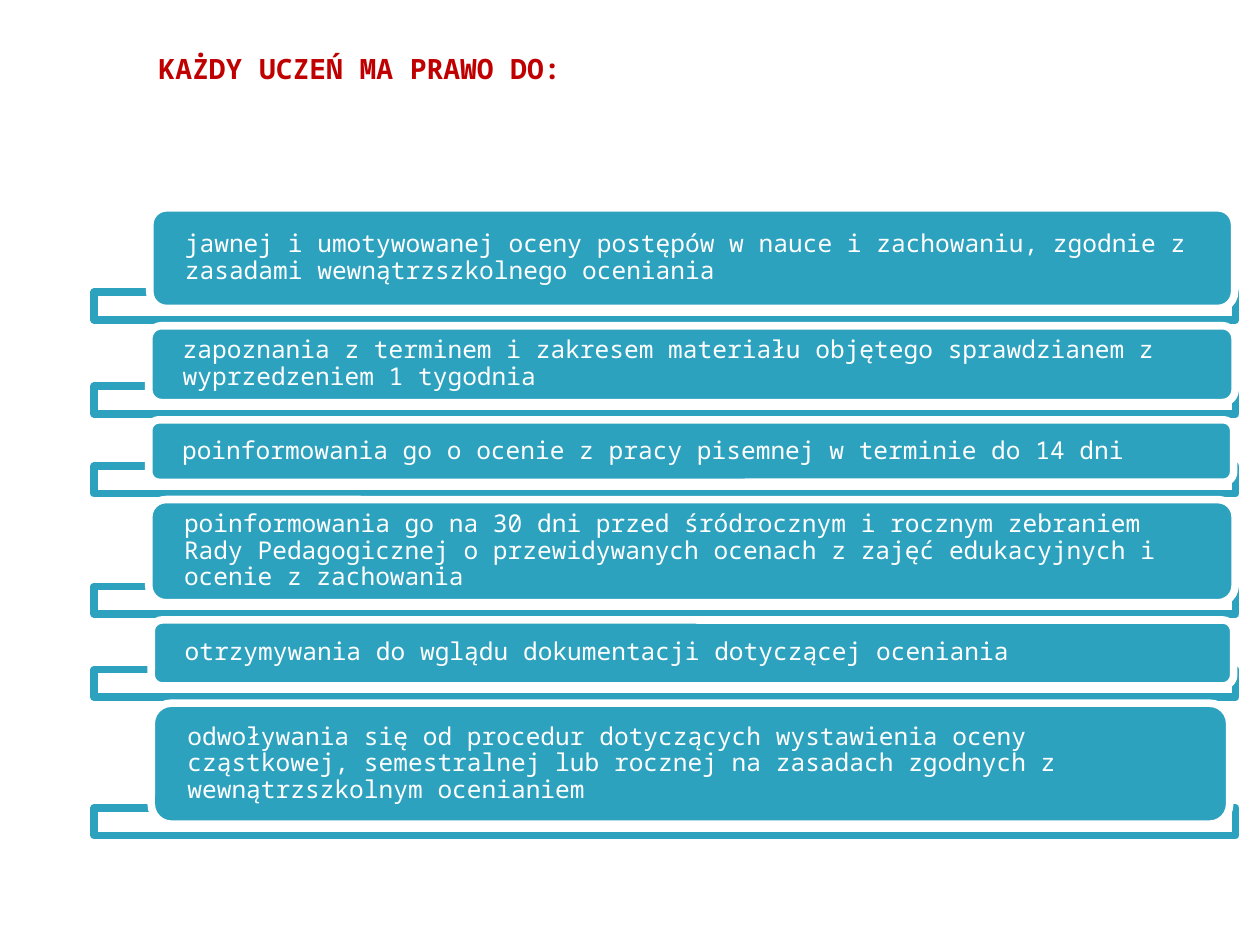
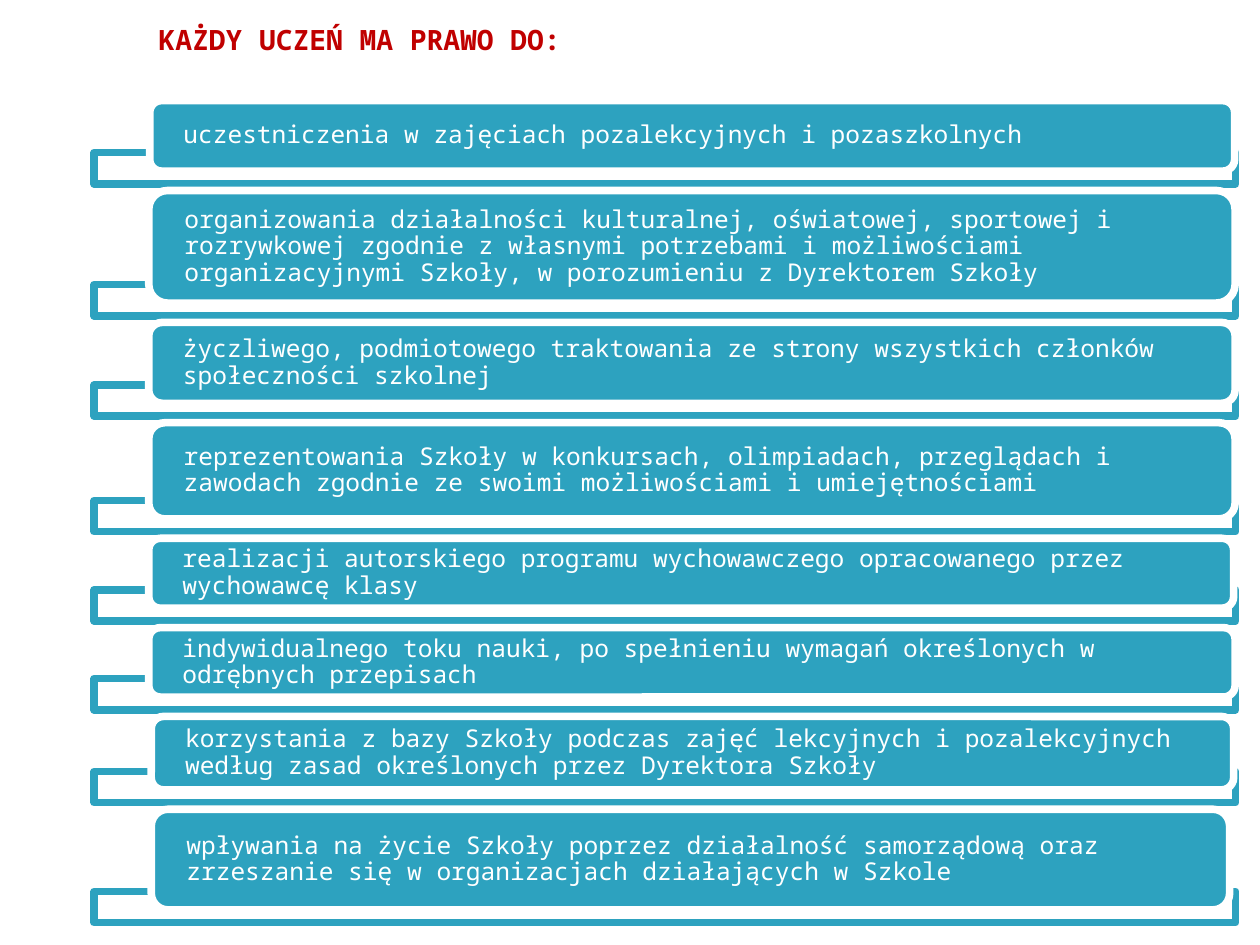
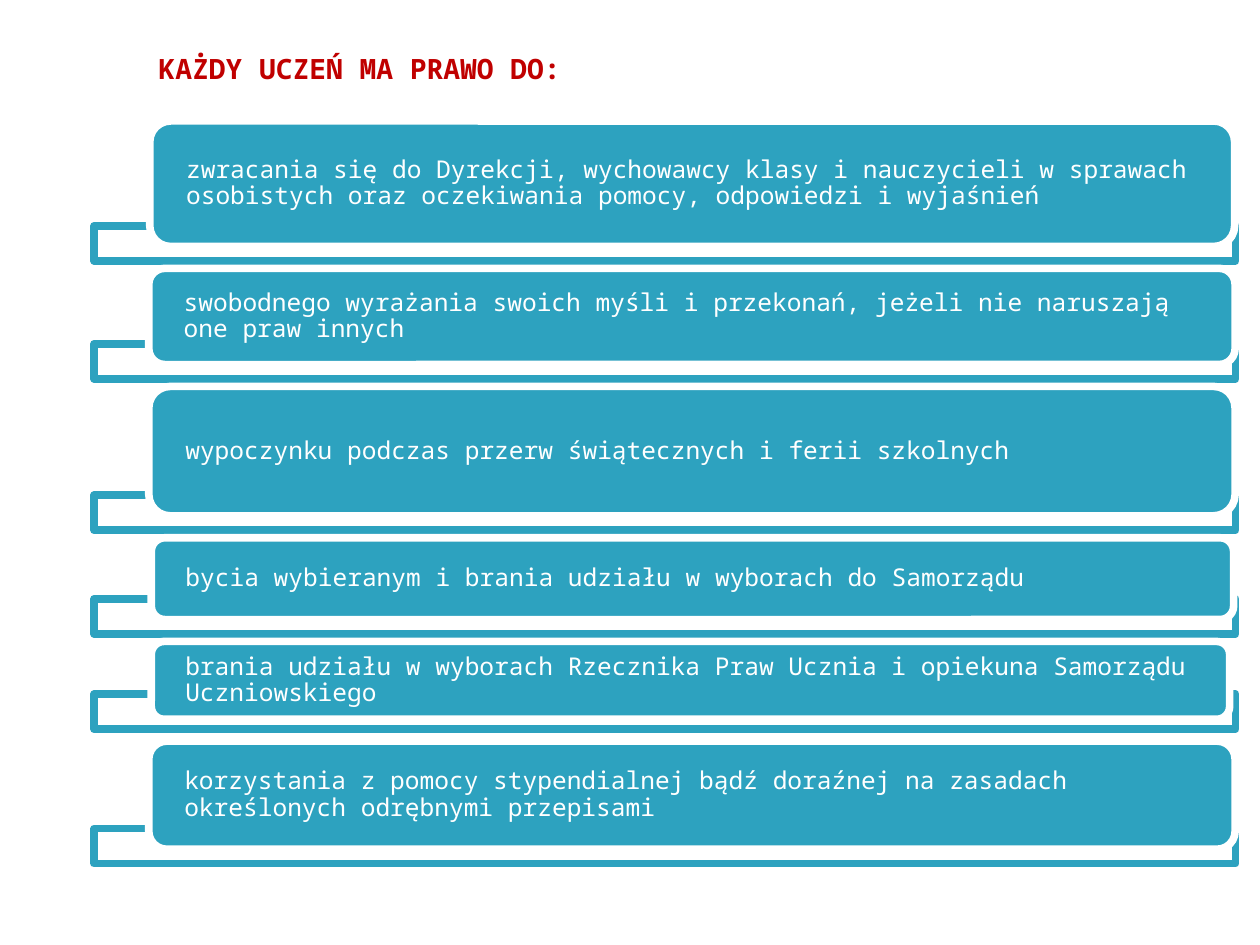
from dataclasses import dataclass
from lxml import etree
from pptx import Presentation
from pptx.dml.color import RGBColor
from pptx.enum.shapes import MSO_SHAPE
from pptx.enum.text import MSO_ANCHOR, MSO_AUTO_SIZE, PP_ALIGN
from pptx.oxml.ns import qn
from pptx.util import Cm, Pt

RECT = MSO_SHAPE.RECTANGLE
ROUND = MSO_SHAPE.ROUNDED_RECTANGLE
TOP, MIDDLE = MSO_ANCHOR.TOP, MSO_ANCHOR.MIDDLE
LEFT, RIGHT = PP_ALIGN.LEFT, PP_ALIGN.RIGHT
NO_FIT = MSO_AUTO_SIZE.NONE

TEAL = RGBColor(0x2D, 0xA2, 0xBF)
RED = RGBColor(0xC0, 0x00, 0x00)
WHITE = RGBColor(0xFF, 0xFF, 0xFF)
FACE = "Noto Sans Mono"
TITLE = "KAŻDY UCZEŃ MA PRAWO DO:"

LIST_X, LIST_W = 1.9, 23.01
TITLE_END = 2.62
OVERLAP, STEP = 0.59, 0.62


@dataclass
class Right:
    left: float
    width: float
    height: float
    text: str
    lift: float = 0


@dataclass
class Page:
    title_y: float
    list_y: float
    strip_h: float
    rights: list


PAGES = [
    Page(0.91, 4.19, 0.56, [
        Right(1.12, 21.87, 2.03, "jawnej i umotywowanej oceny postępów w nauce i zachowaniu, "
              "zgodnie z zasadami wewnątrzszkolnego oceniania"),
        Right(1.1, 21.9, 1.55, "zapoznania z terminem i zakresem materiału objętego "
              "sprawdzianem z wyprzedzeniem 1 tygodnia"),
        Right(1.1, 21.87, 1.26, "poinformowania go o ocenie z pracy pisemnej w terminie do 14 dni"),
        Right(1.1, 21.9, 2.08, "poinformowania go na 30 dni przed śródrocznym i rocznym zebraniem "
              "Rady Pedagogicznej o przewidywanych ocenach z zajęć edukacyjnych "
              "i ocenie z zachowania"),
        Right(1.15, 21.82, 1.33, "otrzymywania do wglądu dokumentacji dotyczącej oceniania"),
        Right(1.15, 21.74, 2.44, "odwoływania się od procedur dotyczących wystawienia oceny "
              "cząstkowej, semestralnej lub rocznej na zasadach zgodnych z "
              "wewnątrzszkolnym ocenianiem"),
    ]),
    Page(0.33, 2.03, 0.63, [
        Right(1.12, 21.87, 1.42, "uczestniczenia w zajęciach pozalekcyjnych i pozaszkolnych"),
        Right(1.1, 21.9, 2.27, "organizowania działalności kulturalnej, oświatowej, sportowej i "
              "rozrywkowej zgodnie z własnymi potrzebami i możliwościami "
              "organizacyjnymi Szkoły, w porozumieniu z Dyrektorem Szkoły"),
        Right(1.1, 21.9, 1.63, "życzliwego, podmiotowego traktowania ze strony wszystkich "
              "członków społeczności szkolnej"),
        Right(1.1, 21.9, 1.94, "reprezentowania Szkoły w konkursach, olimpiadach, przeglądach i "
              "zawodach zgodnie ze swoimi możliwościami i umiejętnościami"),
        Right(1.1, 21.87, 1.41, "realizacji autorskiego programu wychowawczego opracowanego "
              "przez wychowawcę klasy"),
        Right(1.1, 21.9, 1.4, "indywidualnego toku nauki, po spełnieniu wymagań określonych w "
              "odrębnych przepisach"),
        Right(1.15, 21.82, 1.48, "korzystania z bazy Szkoły podczas zajęć lekcyjnych i "
              "pozalekcyjnych według zasad określonych przez Dyrektora Szkoły"),
        Right(1.15, 21.74, 2.03, "wpływania na życie Szkoły poprzez działalność samorządową oraz "
              "zrzeszanie się w organizacjach działających w Szkole"),
    ]),
    Page(0.91, 2.44, 0.71, [
        Right(1.12, 21.87, 2.53, "zwracania się do Dyrekcji, wychowawcy klasy i nauczycieli w "
              "sprawach osobistych oraz oczekiwania pomocy, odpowiedzi i wyjaśnień"),
        Right(1.1, 21.9, 1.94, "swobodnego wyrażania swoich myśli i przekonań, jeżeli nie "
              "naruszają one praw innych"),
        Right(1.1, 21.9, 2.61, "wypoczynku podczas przerw świątecznych i ferii szkolnych"),
        Right(1.15, 21.82, 1.65, "bycia wybieranym i brania udziału w wyborach do Samorządu"),
        Right(1.15, 21.74, 1.57, "brania udziału w wyborach Rzecznika Praw Ucznia i opiekuna "
              "Samorządu Uczniowskiego", 0.09),
        Right(1.1, 21.9, 2.18, "korzystania z pomocy stypendialnej bądź doraźnej na zasadach "
              "określonych odrębnymi przepisami"),
    ]),
]


def set_font(par, size, color, bold=False):
    for run in par.runs:
        font = run.font
        font.name, font.size, font.bold = FACE, Pt(size), bold
        font.color.rgb = color


def add_title(slide, top):
    title = slide.shapes.title
    title.left, title.top = Cm(0.51), Cm(top)
    title.width, title.height = Cm(11.05), Cm(TITLE_END - top)
    frame = title.text_frame
    frame.text = TITLE
    frame.vertical_anchor = TOP
    frame.auto_size = NO_FIT
    par = frame.paragraphs[0]
    par.alignment = RIGHT
    set_font(par, 16, RED, True)


def add_block(slide, kind, box, fill, line):
    shape = slide.shapes.add_shape(kind, *[Cm(n) for n in box])
    shape.shadow.inherit = False
    shape.fill.solid()
    shape.fill.fore_color.rgb = fill
    shape.line.color.rgb = line
    shape.line.width = Pt(4.33)
    return shape


def add_strip(slide, box):
    strip = add_block(slide, RECT, box, WHITE, TEAL)
    color = strip.fill._xPr.find(qn("a:solidFill"))[0]
    etree.SubElement(color, qn("a:alpha")).set("val", "90000")


def add_label(slide, box, text):
    label = add_block(slide, ROUND, box, TEAL, WHITE)
    frame = label.text_frame
    frame.text = text
    frame.word_wrap = True
    frame.vertical_anchor = MIDDLE
    frame.margin_left = frame.margin_right = Cm(0.61)
    frame.margin_top = frame.margin_bottom = 0
    par = frame.paragraphs[0]
    par.alignment = LEFT
    par.line_spacing = 0.9
    set_font(par, 14, WHITE)


def add_list(slide, left, top, width, strip_h, rights):
    for item in rights:
        end = top + item.height
        strip_y = end - OVERLAP * strip_h - item.lift
        add_strip(slide, (left, strip_y, width, strip_h))
        add_label(slide, (left + item.left, top, item.width, item.height), item.text)
        top = end + STEP * strip_h


def main():
    deck = Presentation()
    deck.slide_width, deck.slide_height = Cm(25.4), Cm(19.05)
    for page in PAGES:
        slide = deck.slides.add_slide(deck.slide_layouts[5])
        add_title(slide, page.title_y)
        add_list(slide, LIST_X, page.list_y, LIST_W, page.strip_h, page.rights)
    deck.save("out.pptx")


if __name__ == "__main__":
    main()
